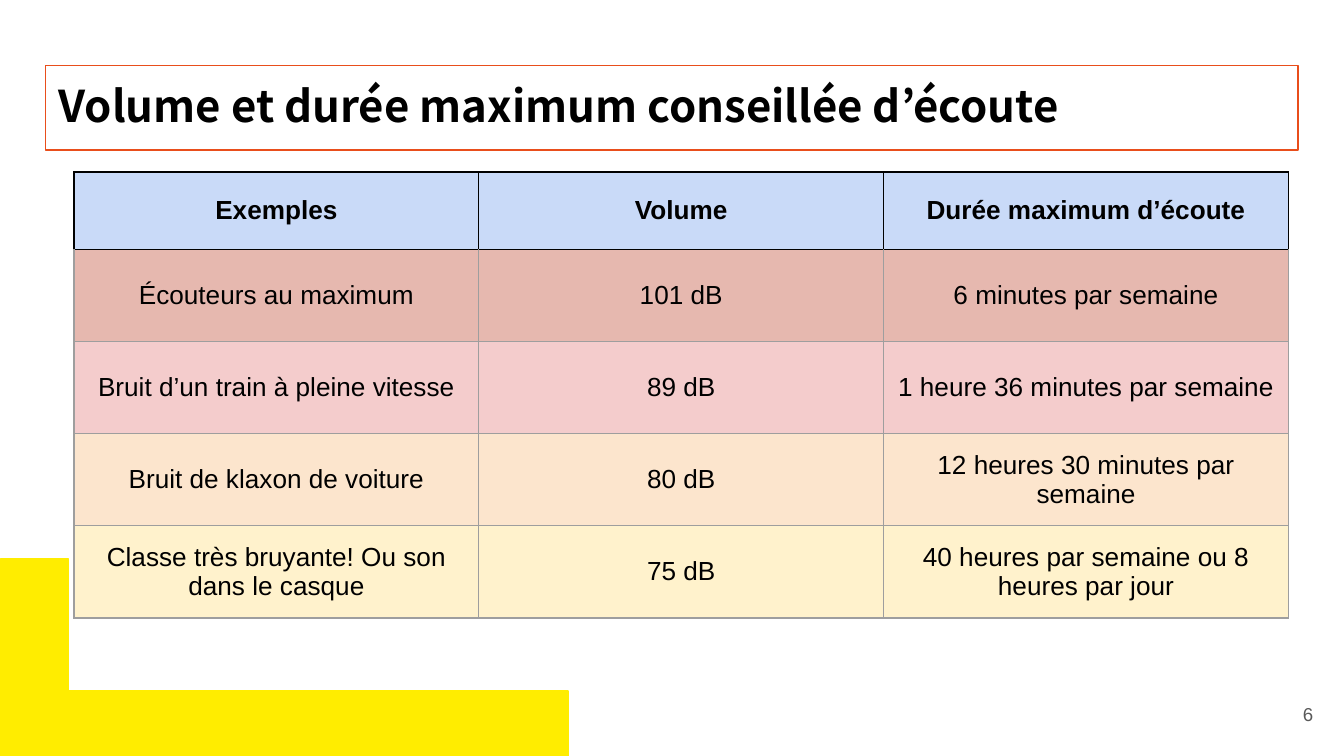
import pptx
import pptx.dml.color
import pptx.enum.shapes
import pptx.enum.text
import pptx.oxml
import pptx.oxml.ns
import pptx.util

Cm = pptx.util.Cm
Pt = pptx.util.Pt
RGBColor = pptx.dml.color.RGBColor
ANCHOR = pptx.enum.text.MSO_ANCHOR
ALIGN = pptx.enum.text.PP_ALIGN
RECTANGLE = pptx.enum.shapes.MSO_SHAPE.RECTANGLE

BLACK = RGBColor(0x00, 0x00, 0x00)
GREY = RGBColor(0x59, 0x59, 0x59)
BORDER_GREY = RGBColor(0x9E, 0x9E, 0x9E)
YELLOW = RGBColor(0xFF, 0xED, 0x00)
ORANGE = RGBColor(0xE9, 0x4E, 0x1B)
HEADER_BLUE = RGBColor(0xC9, 0xDA, 0xF8)
RED = RGBColor(0xE6, 0xB8, 0xAF)
PINK = RGBColor(0xF4, 0xCC, 0xCC)
PEACH = RGBColor(0xFC, 0xE5, 0xCD)
CREAM = RGBColor(0xFF, 0xF2, 0xCC)

ROWS = [
    (HEADER_BLUE, ["Exemples", "Volume", "Durée maximum d’écoute"]),
    (RED, ["Écouteurs au maximum", "101 dB", "6 minutes par semaine"]),
    (PINK, ["Bruit d’un train à pleine vitesse", "89 dB", "1 heure 36 minutes par semaine"]),
    (PEACH, ["Bruit de klaxon de voiture", "80 dB", "12 heures 30 minutes par semaine"]),
    (CREAM, ["Classe très bruyante! Ou son dans le casque", "75 dB",
             "40 heures par semaine ou 8 heures par jour"]),
]


class SlideBuilder:
    font = "Arial"
    title_font = "Noto Sans CJK JP"
    line = Pt(0.75)
    inset = Cm(0.25)

    def __init__(self, s):
        self.s = s

    def set_text(self, holder, tf, text, size, align, anchor,
                 color=BLACK, bold=False, font=None):
        """Set one paragraph in tf; holder, a text frame or a cell, takes the margins."""
        holder.margin_left = holder.margin_right = self.inset
        holder.margin_top = holder.margin_bottom = self.inset
        holder.vertical_anchor = anchor
        tf.word_wrap = True
        p = tf.paragraphs[0]
        p.text = text
        p.alignment = align
        p.font.name = font or self.font
        p.font.size = Pt(size)
        p.font.bold = bold
        p.font.color.rgb = color

    def bar(self, left, top, width, height, rotation=0):
        sp = self.s.shapes.add_shape(RECTANGLE, Cm(left), Cm(top), Cm(width), Cm(height))
        sp.shadow.inherit = False
        sp.rotation = rotation
        sp.fill.solid()
        sp.fill.fore_color.rgb = YELLOW
        sp.line.color.rgb = YELLOW
        sp.line.width = self.line

    def text_box(self, left, top, width, height):
        return self.s.shapes.add_textbox(Cm(left), Cm(top), Cm(width), Cm(height))

    def title(self, text, *box):
        sp = self.text_box(*box)
        sp.line.color.rgb = ORANGE
        sp.line.width = self.line
        tf = sp.text_frame
        self.set_text(tf, tf, text, 23.4, ALIGN.LEFT, ANCHOR.TOP,
                      bold=True, font=self.title_font)

    def page_number(self, text, *box):
        tf = self.text_box(*box).text_frame
        self.set_text(tf, tf, text, 10, ALIGN.RIGHT, ANCHOR.MIDDLE, GREY)

    def borders(self, cell, colors):
        """Draw the left, right, top and bottom borders, in that order."""
        tc_pr = cell._tc.get_or_add_tcPr()
        for side, color in zip("LRTB", colors):
            tc_pr.append(pptx.oxml.parse_xml(
                f'<a:ln{side} {pptx.oxml.ns.nsdecls("a")} w="{self.line}">'
                f'<a:solidFill><a:srgbClr val="{color}"/></a:solidFill></a:ln{side}>'))

    def table(self, rows, left, top, col_width, header_height, row_height):
        n_cols = len(rows[0][1])
        height = header_height + row_height * (len(rows) - 1)
        table = self.s.shapes.add_table(len(rows), n_cols, Cm(left), Cm(top),
                                        Cm(col_width * n_cols), Cm(height)).table
        table.horz_banding = False
        for col in table.columns:
            col.width = Cm(col_width)
        for i, (fill, texts) in enumerate(rows):
            header = i == 0
            table.rows[i].height = Cm(header_height if header else row_height)
            side = BLACK if header else BORDER_GREY
            top_color = BLACK if i <= 1 else BORDER_GREY
            for j, text in enumerate(texts):
                cell = table.cell(i, j)
                self.borders(cell, [side, side, top_color, side])
                cell.fill.solid()
                cell.fill.fore_color.rgb = fill
                self.set_text(cell, cell.text_frame, text, 14, ALIGN.CENTER,
                              ANCHOR.MIDDLE, bold=header)


def main():
    prs = pptx.Presentation()
    prs.slide_width, prs.slide_height = Cm(25.4), Cm(14.29)
    b = SlideBuilder(prs.slides.add_slide(prs.slide_layouts[6]))
    b.bar(0, 13.06, 10.74, 1.27)
    b.bar(-4.72, 15.29, 10.74, 1.27, rotation=90)
    b.title("Volume et durée maximum conseillée d’écoute", 0.86, 1.24, 23.67, 1.6)
    b.table(ROWS, 1.4, 3.25, col_width=7.65, header_height=1.47, row_height=1.74)
    b.page_number("6", 23.55, 12.95, 1.52, 1.09)
    prs.save("out.pptx")


if __name__ == "__main__":
    main()
